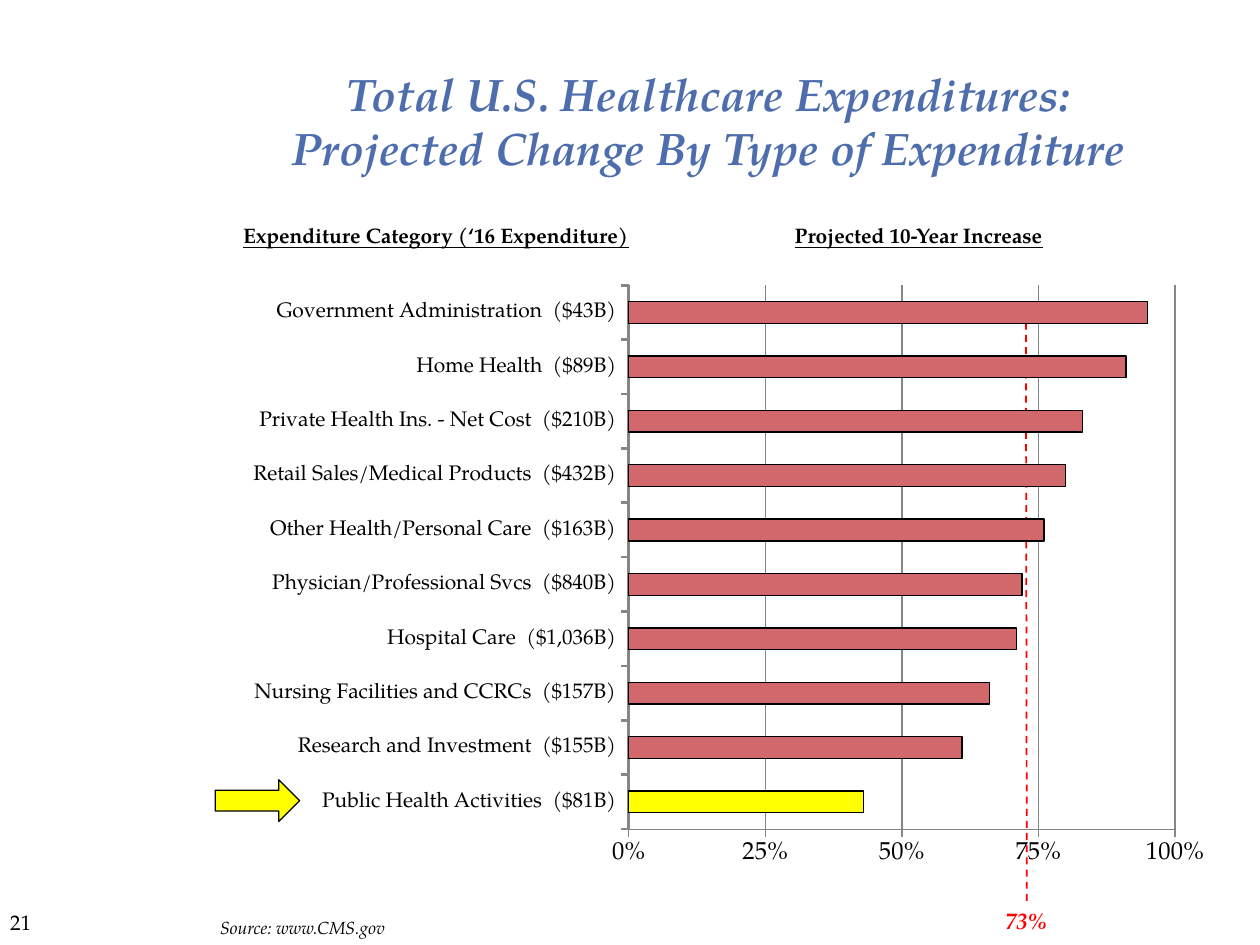
from lxml.etree import SubElement
from pptx import Presentation
from pptx.chart.data import CategoryChartData
from pptx.dml.color import RGBColor
from pptx.enum.chart import XL_CHART_TYPE, XL_TICK_MARK
from pptx.enum.dml import MSO_LINE
from pptx.enum.shapes import MSO_CONNECTOR, MSO_SHAPE
from pptx.enum.text import MSO_ANCHOR, PP_ALIGN
from pptx.oxml import parse_xml
from pptx.oxml.ns import nsdecls, qn
from pptx.util import Cm, Pt

BLACK = RGBColor(0x00, 0x00, 0x00)
BLUE = RGBColor(0x4D, 0x6D, 0xAC)
RED = RGBColor(0xFF, 0x00, 0x00)
ROSE = RGBColor(0xD0, 0x68, 0x6C)
YELLOW = RGBColor(0xFF, 0xFF, 0x00)
GRAY = RGBColor(0x86, 0x86, 0x86)
FONT = "TeX Gyre Pagella"

CENTER = PP_ALIGN.CENTER
HEADING = dict(bold=True, underline=True)
TEXTS = [
    ("21", (-0.64, 18.21, 2.11, 1.27), dict(align=CENTER)),
    ("Total U.S. Healthcare Expenditures:\vProjected Change By Type of Expenditure",
     (3.18, 0.84, 22.22, 3.18),
     dict(size=26, color=BLUE, bold=True, italic=True, align=CENTER, anchor=MSO_ANCHOR.MIDDLE)),
    ("Source: www.CMS.gov", (4.19, 18.36, 4.9, 0.69), dict(size=10, italic=True)),
    ("Expenditure Category (‘16 Expenditure)", (4.65, 4.37, 9.96, 0.76), HEADING),
    ("Projected 10-Year Increase", (13.54, 4.37, 9.96, 0.76), dict(HEADING, align=CENTER)),
    ("73%", (19.96, 18.16, 1.47, 0.81),
     dict(size=13, color=RED, bold=True, italic=True, align=CENTER)),
]
EXPENDITURES = [
    ("Public Health Activities  ($81B)", 0.43),
    ("Research and Investment  ($155B)", 0.61),
    ("Nursing Facilities and CCRCs  ($157B)", 0.66),
    ("Hospital Care  ($1,036B)", 0.71),
    ("Physician/Professional Svcs  ($840B)", 0.72),
    ("Other Health/Personal Care  ($163B)", 0.76),
    ("Retail Sales/Medical Products  ($432B)", 0.8),
    ("Private Health Ins. - Net Cost  ($210B)", 0.83),
    ("Home Health  ($89B)", 0.91),
    ("Government Administration  ($43B)", 0.95),
]
CHART_AREA = (4.65, 5.21, 20.32, 13.49)
PLOT = dict(x=0.395, y=0.04, w=0.542, h=0.813)
AVERAGE_LINE = (20.7, 18.16, 20.68, 6.07)
ARROW = (4.34, 15.72, 1.7, 0.84)


def lengths(values):
    return [Cm(value) for value in values]


def add_text(page, text, area, size=12, color=BLACK, bold=False, italic=False,
             underline=False, align=PP_ALIGN.LEFT, anchor=MSO_ANCHOR.TOP):
    box = page.shapes.add_textbox(*lengths(area))
    frame = box.text_frame
    frame.word_wrap = True
    frame.vertical_anchor = anchor
    para = frame.paragraphs[0]
    para.text = text
    para.alignment = align
    for span in para.runs:
        font = span.font
        font.name, font.size = FONT, Pt(size)
        font.bold, font.italic, font.underline = bold, italic, underline
        font.color.rgb = color


def fill_and_outline(target, color):
    target.fill.solid()
    target.fill.fore_color.rgb = color
    target.line.color.rgb = BLACK
    target.line.width = Pt(0.75)


def style_axis(axis, size):
    axis.major_tick_mark = XL_TICK_MARK.OUTSIDE
    axis.minor_tick_mark = XL_TICK_MARK.NONE
    axis.format.line.color.rgb = GRAY
    font = axis.tick_labels.font
    font.name, font.size = FONT, Pt(size)
    font.color.rgb = BLACK


def place_plot(chart):
    plot_area = chart.plots[0]._element.getparent()
    for old in plot_area.findall(qn("c:layout")):
        plot_area.remove(old)
    layout = parse_xml(f"<c:layout {nsdecls('c')}><c:manualLayout/></c:layout>")
    settings = dict(layoutTarget="inner", xMode="edge", yMode="edge", **PLOT)
    for name, value in settings.items():
        SubElement(layout[0], qn(f"c:{name}")).set("val", str(value))
    plot_area.insert(0, layout)


def add_expenditure_chart(page):
    data = CategoryChartData(number_format="0%")
    data.categories = [name for name, _ in EXPENDITURES]
    data.add_series("Series 1", [value for _, value in EXPENDITURES])
    chart = page.shapes.add_chart(
        XL_CHART_TYPE.BAR_CLUSTERED, *lengths(CHART_AREA), data).chart
    chart.has_legend = False
    chart.has_title = False
    chart.font.name, chart.font.size = "Cambria", Pt(18)
    chart.font.color.rgb = BLACK
    plot = chart.plots[0]
    plot.gap_width = 150
    plot.vary_by_categories = False
    series = plot.series[0]
    fill_and_outline(series.format, ROSE)
    fill_and_outline(series.points[0].format, YELLOW)
    style_axis(chart.category_axis, 12)
    chart.category_axis.format.line.width = Pt(1.5)
    axis = chart.value_axis
    style_axis(axis, 14)
    axis.minimum_scale, axis.maximum_scale, axis.major_unit = 0, 1, 0.25
    axis.tick_labels.number_format = "0%"
    axis.tick_labels.number_format_is_linked = False
    axis.has_major_gridlines = True
    axis.major_gridlines.format.line.color.rgb = GRAY
    place_plot(chart)


def add_average_line(page):
    connector = page.shapes.add_connector(MSO_CONNECTOR.STRAIGHT, *lengths(AVERAGE_LINE))
    connector.line.color.rgb = RED
    connector.line.width = Pt(1)
    connector.line.dash_style = MSO_LINE.DASH
    SubElement(connector._element.spPr, qn("a:effectLst"))


def main():
    deck = Presentation()
    deck.slide_width, deck.slide_height = Cm(25.4), Cm(19.05)
    page = deck.slides.add_slide(deck.slide_layouts[6])
    add_average_line(page)
    add_expenditure_chart(page)
    for text, area, style in TEXTS:
        add_text(page, text, area, **style)
    arrow = page.shapes.add_shape(MSO_SHAPE.RIGHT_ARROW, *lengths(ARROW))
    arrow.shadow.inherit = False
    fill_and_outline(arrow, YELLOW)
    deck.save("out.pptx")


if __name__ == "__main__":
    main()
